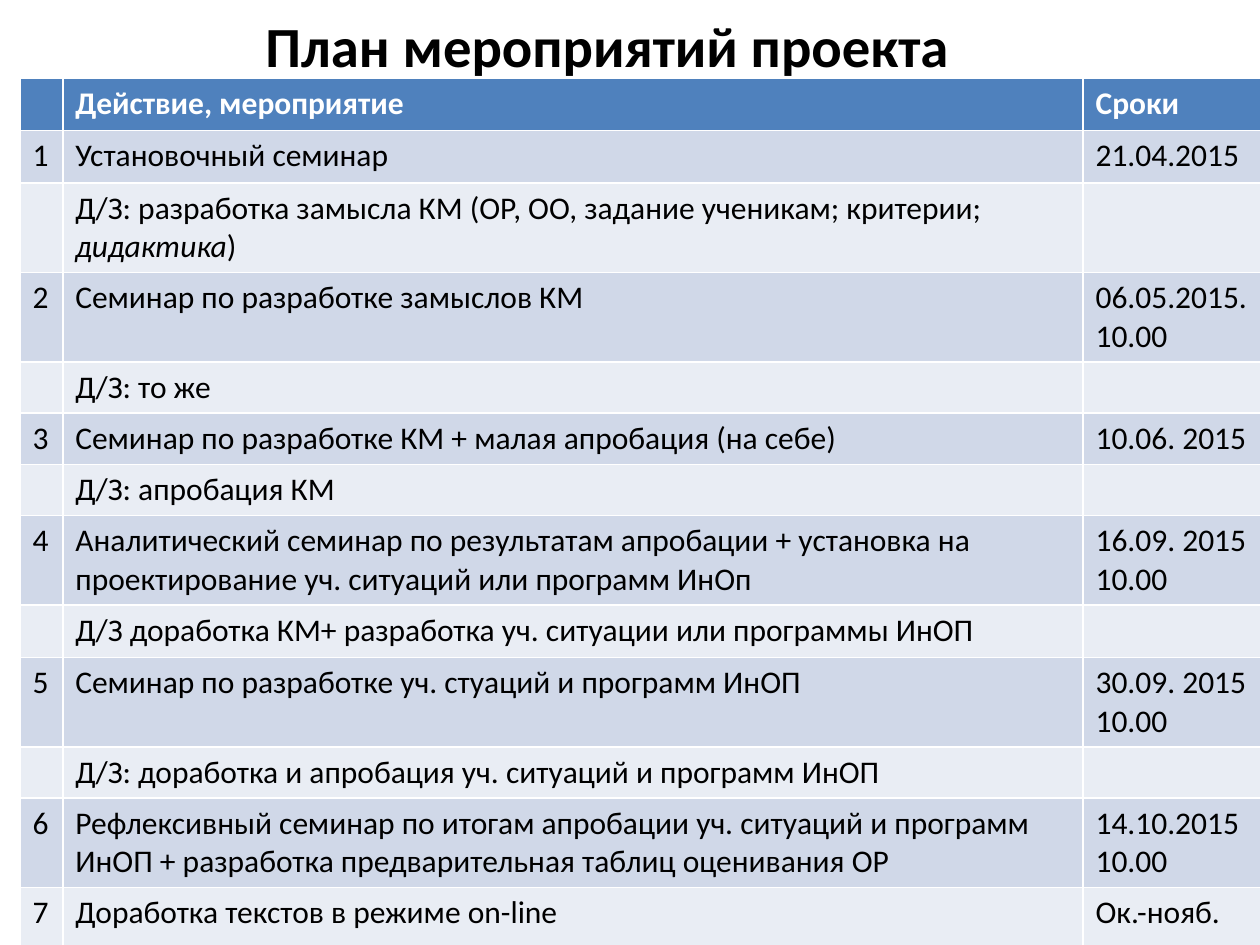
"""Build a one-slide project schedule with a title and a table of events."""
from dataclasses import dataclass

from pptx import Presentation
from pptx.dml.color import RGBColor as RGB
from pptx.enum.text import MSO_ANCHOR as Anchor, MSO_AUTO_SIZE as AutoSize, PP_ALIGN as Align
from pptx.util import Pt

TITLE = "План мероприятий проекта"
HEADER = ("", "Действие, мероприятие", "Сроки")
EVENTS = [
    ("1", "Установочный семинар", "21.04.2015"),
    ("", ("Д/З: разработка замысла КМ (ОР, ОО, задание ученикам; критерии; ", "дидактика", ")"), ""),
    ("2", "Семинар по разработке замыслов КМ", "06.05.2015. 10.00"),
    ("", "Д/З: то же", ""),
    ("3", "Семинар по разработке КМ + малая апробация (на себе)", "10.06. 2015"),
    ("", "Д/З: апробация КМ", ""),
    ("4", "Аналитический семинар по результатам апробации + установка на "
          "проектирование уч. ситуаций или программ ИнОп", "16.09. 2015\n10.00"),
    ("", "Д/З доработка КМ+ разработка уч. ситуации или программы ИнОП", ""),
    ("5", "Семинар по разработке уч. стуаций и программ ИнОП", "30.09. 2015\n10.00"),
    ("", "Д/З: доработка и апробация уч. ситуаций и программ ИнОП", ""),
    ("6", "Рефлексивный семинар по итогам апробации уч. ситуаций и программ "
          "ИнОП + разработка предварительная таблиц оценивания ОР", "14.10.2015\n10.00"),
    ("7", "Доработка текстов в режиме on-line", "Ок.-нояб."),
]
COLUMN_WIDTHS = (24.4, 583, 101.3)
ROW_HEIGHTS = (30, 30, 46, 46, 27.5, 24, 23, 44.5, 30, 39.5, 26, 33, 46)
TITLE_BOX = (36, 11.5, 622, 28)
TABLE_BOX = (11.5, 44.6, sum(COLUMN_WIDTHS), 503.3)


@dataclass(frozen=True)
class Theme:
    """Colours, font and type sizes of the slide."""
    font: str = "Calibri"
    title_size: float = 32.4
    body_size: float = 18
    text: str = "000000"
    header_text: str = "FFFFFF"
    header_fill: str = "4F81BD"
    bands: tuple = ("D0D8E8", "E9EDF4")


THEME = Theme()


def add_run(p, text, size, color, bold=False, italic=False):
    """Append one formatted run to a paragraph."""
    r = p.add_run()
    r.text = text
    r.font.name, r.font.size = THEME.font, Pt(size)
    r.font.bold, r.font.italic = bold, italic
    r.font.color.rgb = RGB.from_string(color)


def add_title(s):
    """Place and format the title placeholder."""
    sp = s.shapes.title
    sp.left, sp.top, sp.width, sp.height = map(Pt, TITLE_BOX)
    tf = sp.text_frame
    tf.word_wrap, tf.auto_size = True, AutoSize.NONE
    tf.vertical_anchor = Anchor.MIDDLE
    p = tf.paragraphs[0]
    p.alignment = Align.CENTER
    add_run(p, TITLE, THEME.title_size, THEME.text, bold=True)


def fill_cell(cell, content, fill, color, bold):
    """Fill a cell; the odd parts of a tuple are italic, lines are paragraphs."""
    cell.fill.solid()
    cell.fill.fore_color.rgb = RGB.from_string(fill)
    tf = cell.text_frame
    lines = [content] if isinstance(content, tuple) else [(t,) for t in content.split("\n")]
    for i, parts in enumerate(lines):
        p = tf.add_paragraph() if i else tf.paragraphs[0]
        for j, text in enumerate(parts):
            if text:
                add_run(p, text, THEME.body_size, color, bold, italic=j % 2 == 1)


def add_schedule(s):
    """Add the table of events."""
    rows = [HEADER, *EVENTS]
    frame = s.shapes.add_table(len(rows), len(HEADER), *map(Pt, TABLE_BOX))
    table = frame.table
    for column, width in zip(table.columns, COLUMN_WIDTHS):
        column.width = Pt(width)
    for i, (row, height) in enumerate(zip(rows, ROW_HEIGHTS)):
        table.rows[i].height = Pt(height)
        fill = THEME.bands[(i - 1) % 2] if i else THEME.header_fill
        color = THEME.text if i else THEME.header_text
        for j, content in enumerate(row):
            fill_cell(table.cell(i, j), content, fill, color, bold=i == 0)
    frame.height = Pt(TABLE_BOX[3])


def main():
    """Create and save the presentation."""
    prs = Presentation()
    prs.slide_width, prs.slide_height = Pt(720), Pt(540)
    s = prs.slides.add_slide(prs.slide_layouts[5])
    add_title(s)
    add_schedule(s)
    prs.save("out.pptx")


if __name__ == "__main__":
    main()
